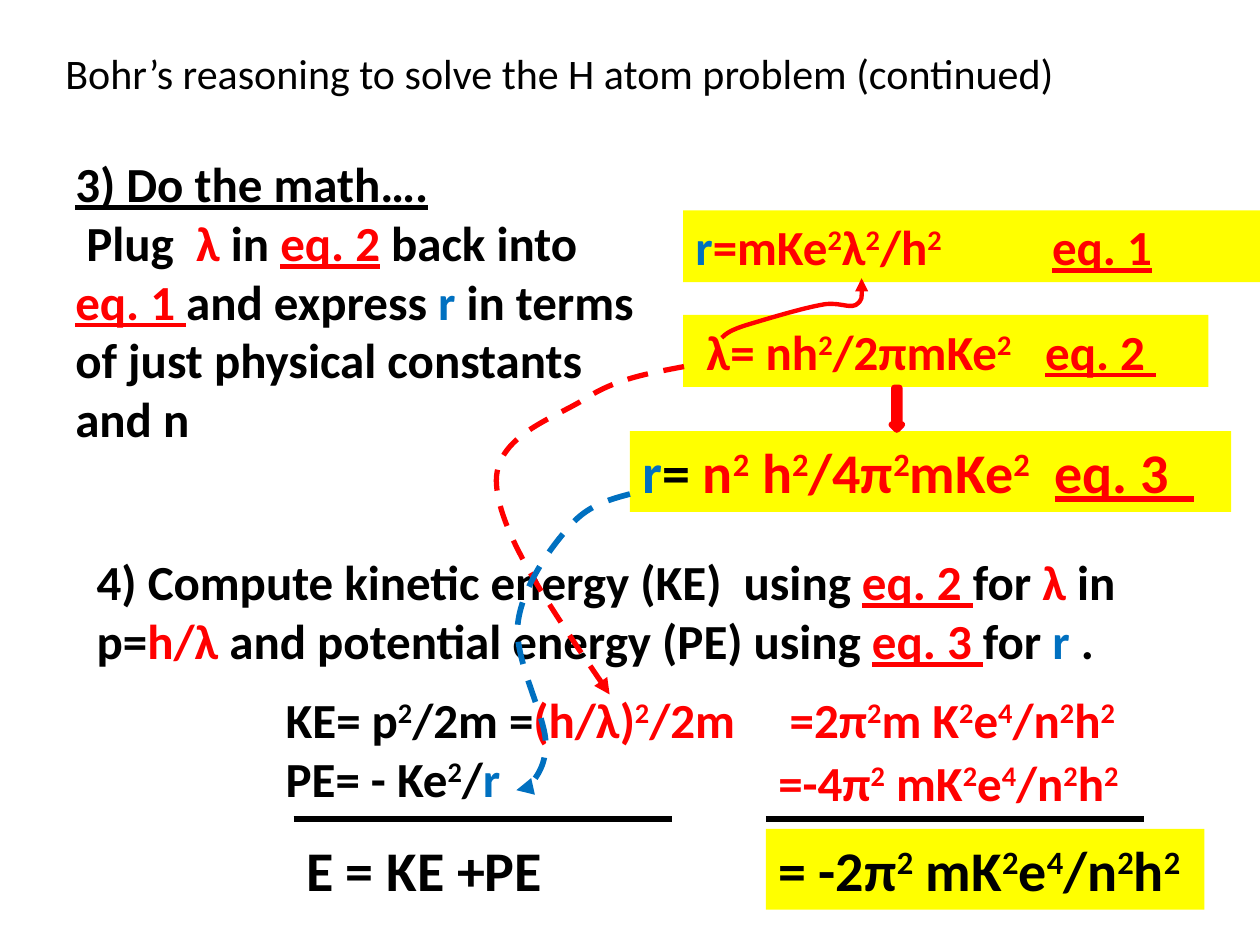
import lxml.etree
import pptx
import pptx.dml.color
import pptx.enum.dml
import pptx.enum.shapes
import pptx.enum.text
import pptx.oxml.ns
import pptx.util

INK = {"black": "000000", "red": "FF0000", "blue": "0070C0",
       "yellow": "FFFF00", "steel": "4F81BD"}
FONT = "Calibri"
KINDS = pptx.enum.shapes.MSO_SHAPE
qn = pptx.oxml.ns.qn


def cm(*vals):
    return [pptx.util.Cm(v) for v in vals]


def color(name):
    return pptx.dml.color.RGBColor.from_string(INK[name])


def add_run(para, text, ink, size, bold, under=False, sup=False):
    run = para.add_run()
    run.text = text
    font = run.font
    font.name, font.size, font.bold = FONT, pptx.util.Pt(size), bold
    font.color.rgb = color(ink)
    if under:
        font.underline = True
    if sup:
        font._element.set("baseline", "30000")


def add_part(para, text, ink, size, bold, under):
    """Add text in which ^ raises the one character after it."""
    first, *rest = text.split("^")
    if first:
        add_run(para, first, ink, size, bold, under)
    for part in rest:
        add_run(para, part[0], ink, size, bold, under, True)
        if part[1:]:
            add_run(para, part[1:], ink, size, bold, under)


def add_text(slide, box, lines, size=28, bold=True, fill=None, wrap=True, tab=None):
    """Each line is a list of (text, ink) or (text, ink, underlined)."""
    if fill:
        shape = slide.shapes.add_shape(KINDS.RECTANGLE, *cm(*box))
        shape.shadow.inherit = False
        shape.fill.solid()
        shape.fill.fore_color.rgb = color(fill)
        shape.line.fill.background()
    else:
        shape = slide.shapes.add_textbox(*cm(*box))
    frame = shape.text_frame
    frame.word_wrap = wrap
    frame.auto_size = pptx.enum.text.MSO_AUTO_SIZE.SHAPE_TO_FIT_TEXT
    frame.vertical_anchor = pptx.enum.text.MSO_ANCHOR.TOP
    for i, line in enumerate(lines):
        para = frame.add_paragraph() if i else frame.paragraphs[0]
        para.alignment = pptx.enum.text.PP_ALIGN.LEFT
        if tab:
            stops = lxml.etree.SubElement(para._p.get_or_add_pPr(), qn("a:tabLst"))
            lxml.etree.SubElement(stops, qn("a:tab"), pos=str(cm(tab)[0]), algn="l")
        for text, ink, *under in line:
            add_part(para, text, ink, size, bold, bool(under))


def add_curve(slide, points, ink, width, dash=False):
    """Draw a start point and then cubic Bézier triples, with an arrowhead."""
    start, *rest = [cm(*point) for point in points]
    build = slide.shapes.build_freeform(*start)
    build.add_line_segments(rest, close=False)
    shape = build.convert_to_shape()
    shape.shadow.inherit = False
    shape.fill.background()
    shape.line.color.rgb = color(ink)
    shape.line.width = pptx.util.Pt(width)
    if dash:
        shape.line.dash_style = pptx.enum.dml.MSO_LINE.DASH
    props = shape._element.spPr
    lxml.etree.SubElement(props.find(qn("a:ln")), qn("a:tailEnd"), type="triangle")
    track = next(props.iter(qn("a:path")))
    legs = track.findall(qn("a:lnTo"))
    for i in range(0, len(legs), 3):
        bend = lxml.etree.SubElement(track, qn("a:cubicBezTo"))
        for leg in legs[i:i + 3]:
            bend.append(leg[0])
            track.remove(leg)


def add_rule(slide, left, top, width):
    rule = slide.shapes.add_connector(
        pptx.enum.shapes.MSO_CONNECTOR.STRAIGHT, *cm(left, top, left + width, top))
    rule.line.color.rgb = color("black")
    rule.line.width = pptx.util.Pt(3.5)
    lxml.etree.SubElement(rule._element.spPr, qn("a:effectLst"))


def add_arrow(slide, box):
    arrow = slide.shapes.add_shape(KINDS.DOWN_ARROW, *cm(*box))
    arrow.shadow.inherit = False
    arrow.fill.solid()
    arrow.fill.fore_color.rgb = color("steel")
    arrow.line.color.rgb = color("red")
    arrow.line.width = pptx.util.Pt(3.75)


def add_steps(slide):
    add_text(slide, (1.07, 0.84, 22.23, 1.27), [
        [("Bohr’s reasoning to solve the H atom problem (continued)", "black")]],
        size=24, bold=False)
    add_text(slide, (1.27, 2.97, 12.07, 6.25), [
        [("3) Do the math….", "black", True)],
        [(" Plug  ", "black"), ("λ ", "red"), ("in ", "black"),
         ("eq. 2", "red", True), (" back into ", "black"),
         ("eq. 1 ", "red", True), ("and express ", "black"), ("r", "blue"),
         (" in terms of just physical constants and n", "black")]])
    add_text(slide, (1.7, 11, 23.7, 2.64), [
        [("4) Compute kinetic energy (KE)  using ", "black"),
         ("eq. 2 ", "red", True), ("for ", "black"), ("λ ", "red"),
         ("in p=", "black"), ("h/λ ", "red"),
         ("and potential energy (PE) using ", "black"),
         ("eq. 3 ", "red", True), ("for ", "black"), ("r", "blue"),
         (" .", "black")]])


def add_laws(slide):
    add_text(slide, (13.77, 4.24, 11.63, 1.45), [
        [("r", "blue"), ("=mKe^2λ^2/h^2\t", "red"), ("eq. 1", "red", True)]],
        fill="yellow", tab=7.19)
    add_text(slide, (13.77, 6.35, 10.59, 1.45), [
        [(" λ= nh^2/2πmKe^2\t", "red"), ("eq. 2 ", "red", True)]],
        fill="yellow", tab=7.05)
    add_text(slide, (12.7, 8.69, 12.12, 1.63), [
        [("r", "blue"), ("= ", "black"), ("n^2 h^2/4π^2mKe^2\t", "red"),
         ("eq. 3  ", "red", True)]],
        size=32, fill="yellow", tab=8.31)


def add_sums(slide):
    add_text(slide, (5.51, 13.77, 9.96, 2.64), [
        [("KE= p^2/2m =", "black"), ("(h/λ)^2/2m", "red")],
        [("PE= - Ke^2/", "black"), ("r", "blue")]])
    add_text(slide, (15.67, 13.77, 7.62, 1.45), [[("=2π^2m K^2e^4/n^2h^2", "red")]])
    add_text(slide, (15.44, 15.04, 7.57, 1.45),
             [[("=-4π^2 mK^2e^4/n^2h^2", "red")]], wrap=False)
    add_text(slide, (5.92, 16.71, 9.53, 1.63), [[("E = KE +PE", "black")]], size=32)
    add_text(slide, (15.44, 16.71, 8.84, 1.63),
             [[("= -2π^2 mK^2e^4/n^2h^2", "black")]],
             size=32, fill="yellow", wrap=False)
    for left in (5.92, 15.44):
        add_rule(slide, left, 16.51, 7.62)


def add_links(slide):
    add_curve(slide, [
        (14.55, 6.81), (14.63, 6.73), (14.73, 6.65), (15.06, 6.55),
        (15.39, 6.45), (16.15, 6.22), (16.54, 6.15),
        (16.89, 6.07), (17.09, 6.22), (17.25, 6.15),
        (17.4, 6.05), (17.37, 5.84), (17.37, 5.61)], "red", 2.5)
    add_curve(slide, [
        (13.79, 7.39), (13.13, 7.52), (12.45, 7.62), (11.81, 8.03),
        (11.2, 8.43), (9.93, 8.79), (10.01, 9.78),
        (10.08, 10.77), (11.18, 12.37), (12.29, 14)], "red", 3, True)
    add_curve(slide, [
        (12.7, 9.96), (12.24, 10.08), (11.81, 10.21), (11.46, 10.64),
        (11.07, 11.07), (10.52, 11.86), (10.44, 12.57),
        (10.36, 13.28), (10.97, 14.38), (11, 14.94),
        (11.02, 15.49), (10.72, 15.75), (10.62, 15.93),
        (10.52, 16.08), (10.46, 16), (10.41, 15.93)], "blue", 3.25, True)
    add_arrow(slide, (17.98, 7.82, 0.2, 0.84))


def main():
    deck = pptx.Presentation()
    deck.slide_width, deck.slide_height = cm(25.4, 19.05)
    slide = deck.slides.add_slide(deck.slide_layouts[6])
    add_steps(slide)
    add_laws(slide)
    add_sums(slide)
    add_links(slide)
    deck.save("out.pptx")


if __name__ == "__main__":
    main()
